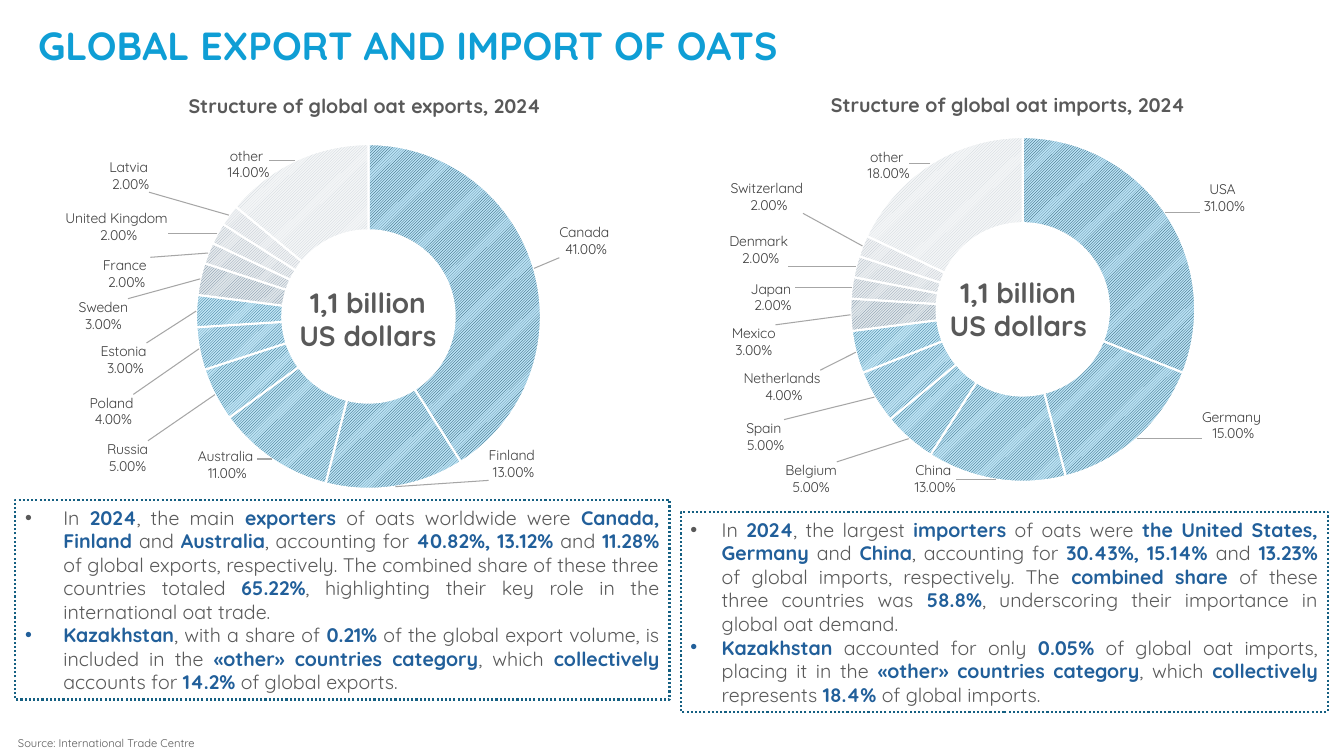
from dataclasses import dataclass
from math import cos, pi, sin

from lxml import etree
from pptx import Presentation
from pptx.chart.data import ChartData
from pptx.dml.color import RGBColor
from pptx.enum.chart import XL_CHART_TYPE
from pptx.enum.dml import MSO_LINE, MSO_PATTERN
from pptx.enum.shapes import MSO_SHAPE
from pptx.enum.text import MSO_ANCHOR, PP_ALIGN
from pptx.oxml import parse_xml
from pptx.oxml.ns import nsdecls, qn
from pptx.util import Inches, Pt

RING = XL_CHART_TYPE.DOUGHNUT
HATCH = MSO_PATTERN.LIGHT_UPWARD_DIAGONAL
DOTS = MSO_LINE.ROUND_DOT
RECT = MSO_SHAPE.RECTANGLE
MIDDLE, TOP = MSO_ANCHOR.MIDDLE, MSO_ANCHOR.TOP
LEFT, CENTER, FULL = PP_ALIGN.LEFT, PP_ALIGN.CENTER, PP_ALIGN.JUSTIFY


@dataclass(frozen=True)
class Theme:
    font: str = "Quicksand"
    plain: str = "Roboto"
    black: str = "000000"
    white: str = "FFFFFF"
    title: str = "0F9ED5"
    text: str = "595959"
    accent: str = "215F9A"
    border: str = "156082"
    label: str = "404040"
    leader: str = "A6A6A6"
    inks: tuple = ("0E4158", "104963", "11506C", "135573", "145B7B", "156082",
                   "638097", "879AAA", "A2AFBB", "B6BFC8", "C9D0D6")
    tints: tuple = ("B9E1F4", "BBE2F4", "BDE3F4", "BEE4F5", "C0E4F5", "C1E5F5",
                    "E0E6EA", "E7EBEE", "ECEFF1", "F0F2F4", "F4F6F7")
    huge: int = 28
    big: int = 20
    body: int = 14
    small: int = 10
    tiny: int = 8


THEME = Theme()
RADIUS = 1.71
WIDE, HIGH = 6.15, 3.7

EXPORTS = [
    ("Canada", " 41.00%", 0.41, 2.14, -0.75), ("Finland", " 13.00%", 0.13, 1.42, 1.46),
    ("Australia ", "11.00%", 0.11, -1.4, 1.47), ("Russia", "5.00%", 0.05, -2.39, 1.4),
    ("Poland", " 4.00%", 0.04, -2.55, 0.94), ("Estonia", " 3.00%", 0.03, -2.43, 0.43),
    ("Sweden", "3.00%", 0.03, -2.63, -0.01), ("France ", "2.00%", 0.02, -2.4, -0.42),
    ("United Kingdom", " 2.00%", 0.02, -2.5, -0.89),
    ("Latvia", " 2.00%", 0.02, -2.38, -1.4), ("other", " 14.00%", 0.14, -1.21, -1.51)]
IMPORTS = [
    ("USA", " 31.00%", 0.31, 1.98, -1.11), ("Germany", " 15.00%", 0.15, 2.07, 1.15),
    ("China ", "13.00%", 0.13, -0.87, 1.68), ("Belgium", "5.00%", 0.05, -2.1, 1.68),
    ("Spain", " 5.00%", 0.05, -2.57, 1.26), ("Netherlands", " 4.00%", 0.04, -2.39, 0.77),
    ("Mexico", "3.00%", 0.03, -2.67, 0.32), ("Japan ", "2.00%", 0.02, -2.48, -0.12),
    ("Denmark", " 2.00%", 0.02, -2.62, -0.59),
    ("Switzerland", " 2.00%", 0.02, -2.54, -1.12), ("other", " 18.00%", 0.18, -1.35, -1.43)]
EXPORT_NOTES = [
    "In *2024*, the main *exporters* of oats worldwide were *Canada, Finland* and "
    "*Australia*, accounting for *40.82%, 13.12%* and *11.28%* of global exports, "
    "respectively. The combined share of these three countries totaled *65.22%*, "
    "highlighting their key role in the international oat trade.",
    "*Kazakhstan*, with a share of *0.21%* of the global export volume, is included in "
    "the *«other» countries category*, which *collectively* accounts for *14.2%* of "
    "global exports."]
IMPORT_NOTES = [
    "In *2024*, the largest *importers* of oats were *the United States, Germany* and "
    "*China*, accounting for *30.43%, 15.14% *and* 13.23%* of global imports, "
    "respectively. The *combined share *of these three countries was *58.8%*, "
    "underscoring their importance in global oat demand.",
    "*Kazakhstan* accounted for only *0.05%* of global oat imports, placing it in the "
    "*«other» countries category*, which *collectively* represents *18.4%* of global "
    "imports."]


def color(code):
    return RGBColor.from_string(code)


def set_font(font, name, size, code, bold=False):
    font.name, font.size, font.bold = name, Pt(size), bold
    font.color.rgb = color(code)


def add_run(para, text, size, code, bold=False):
    run = para.add_run()
    run.text = text
    set_font(run.font, THEME.font, size, code, bold)


def add_text(slide, box, text, size, code, bold=False, align=LEFT, lead=None, pad=0.1):
    frame = slide.shapes.add_textbox(*map(Inches, box)).text_frame
    frame.word_wrap = True
    frame.vertical_anchor = TOP
    frame.margin_left = frame.margin_right = Inches(pad)
    para = frame.paragraphs[0]
    para.alignment = align
    if lead:
        para.line_spacing = Pt(lead)
    add_run(para, text, size, code, bold)


def add_rect(slide, box):
    rect = slide.shapes.add_shape(RECT, *map(Inches, box))
    rect.shadow.inherit = False
    rect.text_frame.word_wrap = True
    rect.text_frame.vertical_anchor = MIDDLE
    return rect


def add_title(slide, box, text):
    rect = add_rect(slide, box)
    rect.fill.solid()
    rect.fill.fore_color.rgb = color(THEME.white)
    rect.line.fill.background()
    para = rect.text_frame.paragraphs[0]
    para.alignment = LEFT
    para.line_spacing = Pt(29.5)
    add_run(para, text, THEME.huge, THEME.title, True)


def add_notes(slide, box, notes, indent):
    rect = add_rect(slide, box)
    rect.fill.background()
    rect.line.color.rgb = color(THEME.border)
    rect.line.width = Pt(1.5)
    rect.line.dash_style = DOTS
    frame = rect.text_frame
    for i, note in enumerate(notes):
        para = frame.add_paragraph() if i else frame.paragraphs[0]
        para.alignment = FULL
        props = para._p.get_or_add_pPr()
        props.set("marL", str(Inches(indent)))
        props.set("indent", str(-Inches(indent)))
        etree.SubElement(props, qn("a:buFont")).set("typeface", "Arial")
        etree.SubElement(props, qn("a:buChar")).set("char", "•")
        for j, part in enumerate(note.split("*")):
            if part:
                strong = j % 2 == 1
                add_run(para, part, THEME.body,
                        THEME.accent if strong else THEME.text, strong)


def make_layout(**parts):
    layout = parse_xml(f'<c:layout {nsdecls("c")}><c:manualLayout/></c:layout>')
    for tag, value in parts.items():
        etree.SubElement(layout[0], qn(f"c:{tag}")).set("val", str(value))
    return layout


def add_ring(slide, left, top, rows, shift):
    data = ChartData(number_format="0.00%")
    data.categories = [row[0].strip() for row in rows]
    data.add_series("Series 1", [row[2] for row in rows])
    box = map(Inches, (left, top, WIDE, HIGH))
    chart = slide.shapes.add_chart(RING, *box, data).chart
    chart.has_title = chart.has_legend = False
    set_font(chart.font, THEME.plain, THEME.small, THEME.black)
    plot = chart.plots[0]
    plot.vary_by_categories = True
    plot._element.find(qn("c:holeSize")).set("val", "70")
    area = plot._element.getparent()
    for old in area.findall(qn("c:layout")):
        area.remove(old)
    area.insert(0, make_layout(
        layoutTarget="inner", xMode="edge", yMode="edge",
        x=0.5 + (shift - RADIUS) / WIDE, y=0.5 - RADIUS / HIGH,
        w=2 * RADIUS / WIDE, h=2 * RADIUS / HIGH))

    series = plot.series[0]
    labels = series.data_labels
    labels.number_format = "0.00%"
    labels.number_format_is_linked = False
    labels.show_value = labels.show_category_name = True
    set_font(labels.font, THEME.font, THEME.small, THEME.label)
    total = sum(row[2] for row in rows)
    done = 0
    mid = 0.75 * RADIUS
    for i, (name, rate, share, x, y) in enumerate(rows):
        point = series.points[i]
        fill = point.format.fill
        fill.patterned()
        fill.pattern = HATCH
        fill.fore_color.rgb = color(THEME.inks[i])
        fill.back_color.rgb = color(THEME.tints[i])
        point.format.line.color.rgb = color(THEME.white)
        point.format.line.width = Pt(1.5)
        frame = point.data_label.text_frame
        add_run(frame.paragraphs[0], name, THEME.small, THEME.label)
        add_run(frame.add_paragraph(), rate, THEME.small, THEME.label)
        angle = 2 * pi * (done + share / 2) / total
        done += share
        label = series._element.findall(".//" + qn("c:dLbl"))[i]
        label.insert(1, make_layout(x=(x - mid * sin(angle)) / WIDE,
                                    y=(y + mid * cos(angle)) / HIGH))
        label.find(qn("c:showCatName")).set("val", "1")
    group = series._element.find(qn("c:dLbls"))
    flag = group.find(qn("c:showLeaderLines"))
    if flag is None:
        flag = etree.SubElement(group, qn("c:showLeaderLines"))
    flag.set("val", "1")
    flag.addnext(parse_xml(
        f'<c:leaderLines {nsdecls("c", "a")}><c:spPr><a:ln w="9525"><a:solidFill>'
        f'<a:srgbClr val="{THEME.leader}"/></a:solidFill></a:ln></c:spPr></c:leaderLines>'))


def add_panel(slide, left, top, rows, shift, head, head_box, sum_box):
    add_ring(slide, left, top, rows, shift)
    add_text(slide, head_box, head, THEME.body, THEME.text, True, CENTER, 29.5)
    add_text(slide, sum_box, "1,1 billion US dollars", THEME.big, THEME.text, True,
             CENTER, pad=0.18)


def main():
    deck = Presentation()
    deck.slide_width, deck.slide_height = Inches(13.33), Inches(7.5)
    slide = deck.slides.add_slide(deck.slide_layouts[6])
    add_panel(slide, 7.03, 1.22, IMPORTS, 0.04, "Structure of global oat imports, 2024",
              (7.55, 0.7, 4.9, 0.45), (9.21, 2.68, 1.78, 0.77))
    add_panel(slide, 0.58, 1.29, EXPORTS, 0, "Structure of global oat exports, 2024",
              (0.99, 0.71, 5.26, 0.45), (2.76, 2.78, 1.78, 0.77))
    add_title(slide, (0.28, 0.22, 12.98, 0.51), "GLOBAL EXPORT AND IMPORT OF OATS")
    add_notes(slide, (0.15, 4.96, 6.49, 1.98), EXPORT_NOTES, 0.38)
    add_notes(slide, (6.75, 5.08, 6.42, 1.98), IMPORT_NOTES, 0.31)
    add_text(slide, (0.08, 7.26, 8.31, 0.24), "Source: International Trade Centre",
             THEME.tiny, THEME.text)
    deck.save("out.pptx")


if __name__ == "__main__":
    main()
